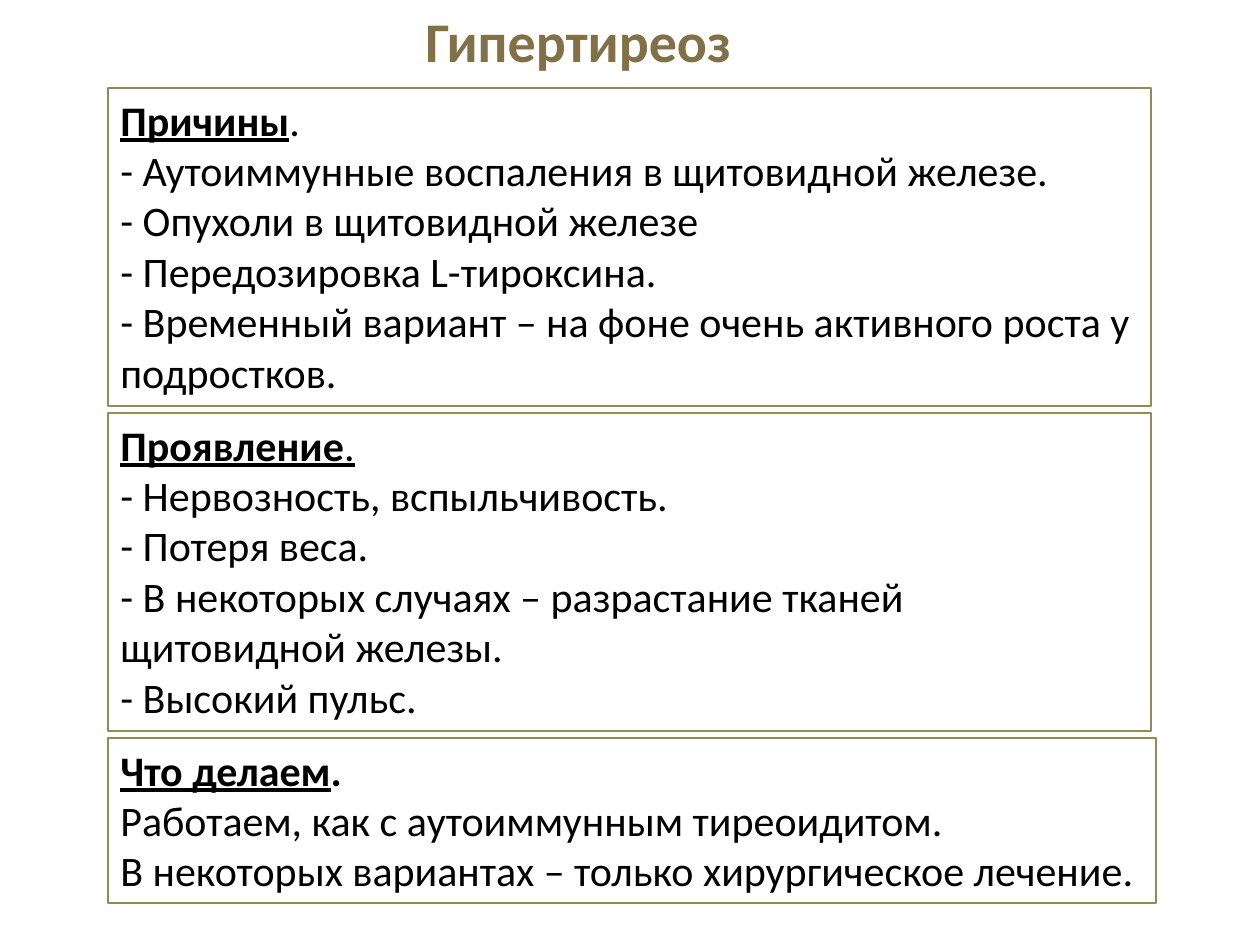
from pptx import Presentation
from pptx.dml.color import RGBColor
from pptx.enum.text import MSO_AUTO_SIZE
from pptx.util import Pt

EMU_PER_PX = 914400 / 126
COLOURS = {"title": "827146", "text": "000000", "border": "948A54"}
BOX_LEFT, BOX_TOP, BOX_STEP = 108, 88, 325


def px(length):
    return round(length * EMU_PER_PX)


def add_text(para, text, size=24, colour="text", bold=False, underline=False):
    for index, line in enumerate(text.split("\n")):
        if index:
            para.add_line_break()
        if line:
            span = para.add_run()
            span.text = line
            span.font.name = "Calibri"
            span.font.size = Pt(size)
            span.font.bold = bold
            span.font.underline = underline
            span.font.color.rgb = RGBColor.from_string(COLOURS[colour])


class SlideBuilder:
    def __init__(self, deck):
        self.page = deck.slides.add_slide(deck.slide_layouts[6])

    def text_box(self, left, top, width, height, paragraphs, wrap=True):
        box = self.page.shapes.add_textbox(px(left), px(top), px(width), px(height))
        frame = box.text_frame
        frame.word_wrap = wrap
        frame.auto_size = MSO_AUTO_SIZE.SHAPE_TO_FIT_TEXT
        for index, spans in enumerate(paragraphs):
            para = frame.add_paragraph() if index else frame.paragraphs[0]
            for text, style in spans:
                add_text(para, text, **style)
        return box

    def framed_box(self, *place, **options):
        box = self.text_box(*place, **options)
        box.line.color.rgb = RGBColor.from_string(COLOURS["border"])
        box.line.width = Pt(0.75)


def main():
    deck = Presentation()
    deck.slide_width, deck.slide_height = px(1260), px(945)
    builder = SlideBuilder(deck)

    title_style = {"size": 32, "colour": "title", "bold": True}
    heading = {"bold": True, "underline": True}
    builder.text_box(413, 0, 334, 81, [[("Гипертиреоз", title_style)]], wrap=False)

    causes = [
        [("Причины", heading), (".", {})],
        [("- Аутоиммунные воспаления в щитовидной железе.\n"
          "- Опухоли в щитовидной железе\n"
          "- Передозировка L-тироксина.\n"
          "- Временный вариант – на фоне очень активного роста у подростков.", {})],
    ]
    symptoms = [
        [("Проявление", heading), (".", {"underline": True})],
        [("- Нервозность, вспыльчивость.\n"
          "- Потеря веса.\n"
          "- В некоторых случаях – разрастание тканей щитовидной железы.\n"
          "- Высокий пульс.", {})],
    ]
    treatment = [
        [("Что делаем", heading), (".\n", {"bold": True}),
         ("Работаем, как с аутоиммунным тиреоидитом.\n"
          "В некоторых вариантах – только хирургическое лечение.", {})],
    ]
    sections = [
        (1043, 318, causes, True),
        (1043, 318, symptoms, True),
        (1048, 165, treatment, False),
    ]
    for row, (width, height, paragraphs, wrap) in enumerate(sections):
        builder.framed_box(BOX_LEFT, BOX_TOP + row * BOX_STEP, width, height,
                           paragraphs=paragraphs, wrap=wrap)

    deck.save("out.pptx")


if __name__ == "__main__":
    main()
